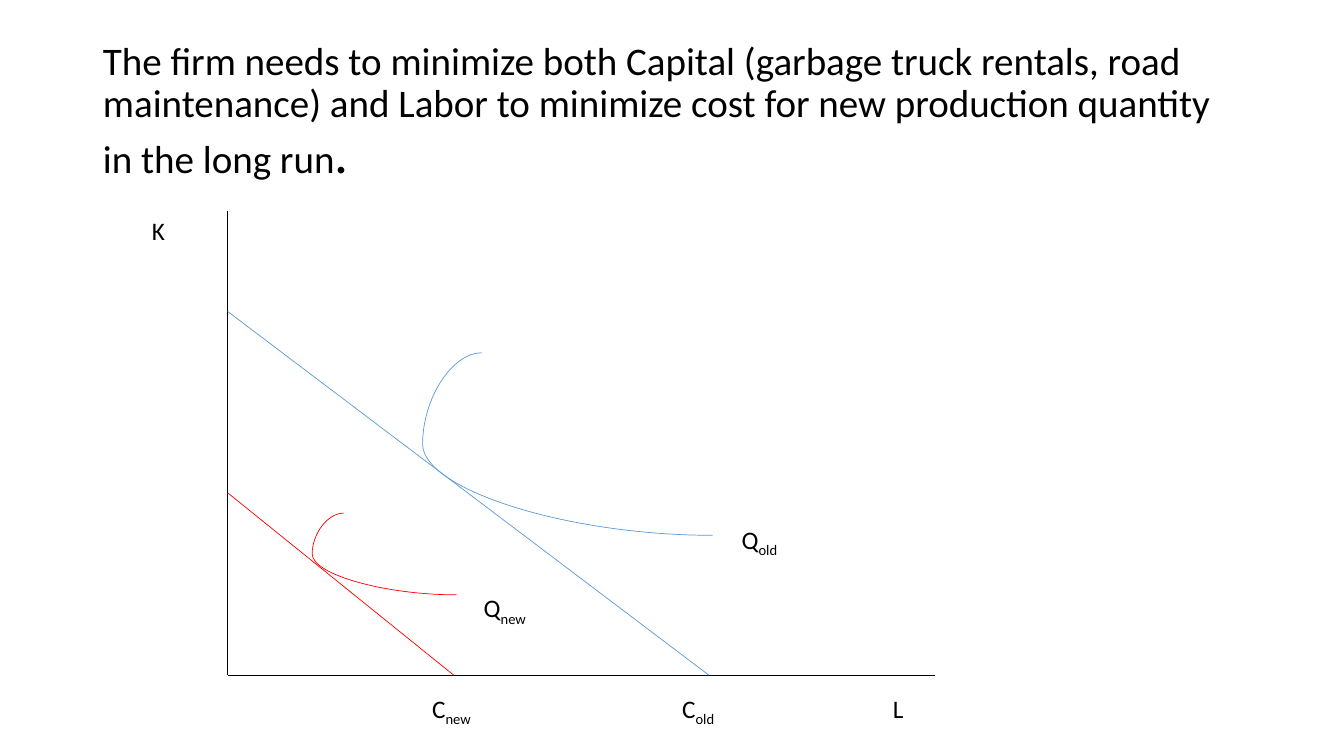
from lxml import etree
from pptx import Presentation
from pptx.dml.color import RGBColor
from pptx.enum.shapes import MSO_CONNECTOR
from pptx.enum.text import MSO_ANCHOR, MSO_AUTO_SIZE, PP_ALIGN
from pptx.oxml.ns import qn
from pptx.util import Cm, Pt

STRAIGHT, CURVE = MSO_CONNECTOR.STRAIGHT, MSO_CONNECTOR.CURVE
MIDDLE, TOP = MSO_ANCHOR.MIDDLE, MSO_ANCHOR.TOP
NO_FIT = MSO_AUTO_SIZE.NONE
LEFT = PP_ALIGN.LEFT

FONT = "Calibri"
BLACK, BLUE, RED = "000000", "5B9BD5", "FF0000"

TITLE = (
    "The firm needs to minimize both Capital (garbage truck rentals, road "
    "maintenance) and Labor to minimize cost for new production quantity "
    "in the long run"
)
TITLE_BOX = (2.34, 1.02, 29.21, 3.68)

ORIGIN_X, ORIGIN_Y = 5.74, 17.01
AXIS_TOP, AXIS_RIGHT = 5.31, 23.57

COST_LINES = [
    (7.85, 17.86, BLUE),
    (12.42, 11.43, RED),
]
ISOQUANTS = [
    (12.14, 8.89, 17.96, 13.49, -25600, BLUE),
    (8.66, 12.93, 11.51, 14.99, -27800, RED),
]
LABELS = [
    ("Q", "old", 18.44, 13.08, 3.33),
    ("Q", "new", 11.94, 14.81, 2.44),
    ("C", "new", 10.64, 17.35, 2.92),
    ("C", "old", 16.94, 17.35, 3.38),
    ("K", "", 3.58, 5.31, 1.55),
    ("L", "", 22.25, 17.35, 1.93),
]
LABEL_HEIGHT = 1.02


def color(value):
    return RGBColor.from_string(value)


def add_text(paragraph, text, size=18, fill=BLACK, subscript=False):
    run = paragraph.add_run()
    run.text = text
    run.font.name = FONT
    run.font.size = Pt(size)
    run.font.color.rgb = color(fill)
    if subscript:
        run._r.get_or_add_rPr().set("baseline", "-25000")


def add_line(slide, start, end, stroke, kind=STRAIGHT, bend=None):
    points = [Cm(value) for value in (*start, *end)]
    connector = slide.shapes.add_connector(kind, *points)
    connector.line.color.rgb = color(stroke)
    connector.line.width = Pt(0.5)
    properties = connector._element.spPr
    etree.SubElement(properties, qn("a:effectLst"))
    if bend is not None:
        guides = properties.find(qn("a:prstGeom")).get_or_add_avLst()
        etree.SubElement(guides, qn("a:gd"), name="adj1", fmla=f"val {bend}")


def add_title(slide):
    title = slide.shapes.title
    title.left, title.top, title.width, title.height = map(Cm, TITLE_BOX)
    frame = title.text_frame
    frame.auto_size = NO_FIT
    frame.vertical_anchor = MIDDLE
    paragraph = frame.paragraphs[0]
    paragraph.alignment = LEFT
    paragraph.line_spacing = 0.9
    add_text(paragraph, TITLE, size=27.9)
    add_text(paragraph, ".", size=39.6)


def add_label(slide, letter, subscript, left, top, width):
    box = slide.shapes.add_textbox(Cm(left), Cm(top), Cm(width), Cm(LABEL_HEIGHT))
    frame = box.text_frame
    frame.word_wrap = True
    frame.vertical_anchor = TOP
    paragraph = frame.paragraphs[0]
    add_text(paragraph, letter)
    if subscript:
        add_text(paragraph, subscript, subscript=True)


def main():
    presentation = Presentation()
    presentation.slide_width = Cm(33.87)
    presentation.slide_height = Cm(19.05)
    slide = presentation.slides.add_slide(presentation.slide_layouts[5])

    add_title(slide)
    origin = (ORIGIN_X, ORIGIN_Y)
    add_line(slide, (ORIGIN_X, AXIS_TOP), origin, BLACK)
    add_line(slide, (AXIS_RIGHT, ORIGIN_Y), origin, BLACK)
    for capital, labor, stroke in COST_LINES:
        add_line(slide, (ORIGIN_X, capital), (labor, ORIGIN_Y), stroke)
    for left, top, right, bottom, bend, stroke in ISOQUANTS:
        add_line(slide, (left, top), (right, bottom), stroke, kind=CURVE, bend=bend)
    for label in LABELS:
        add_label(slide, *label)

    presentation.save("out.pptx")


if __name__ == "__main__":
    main()
